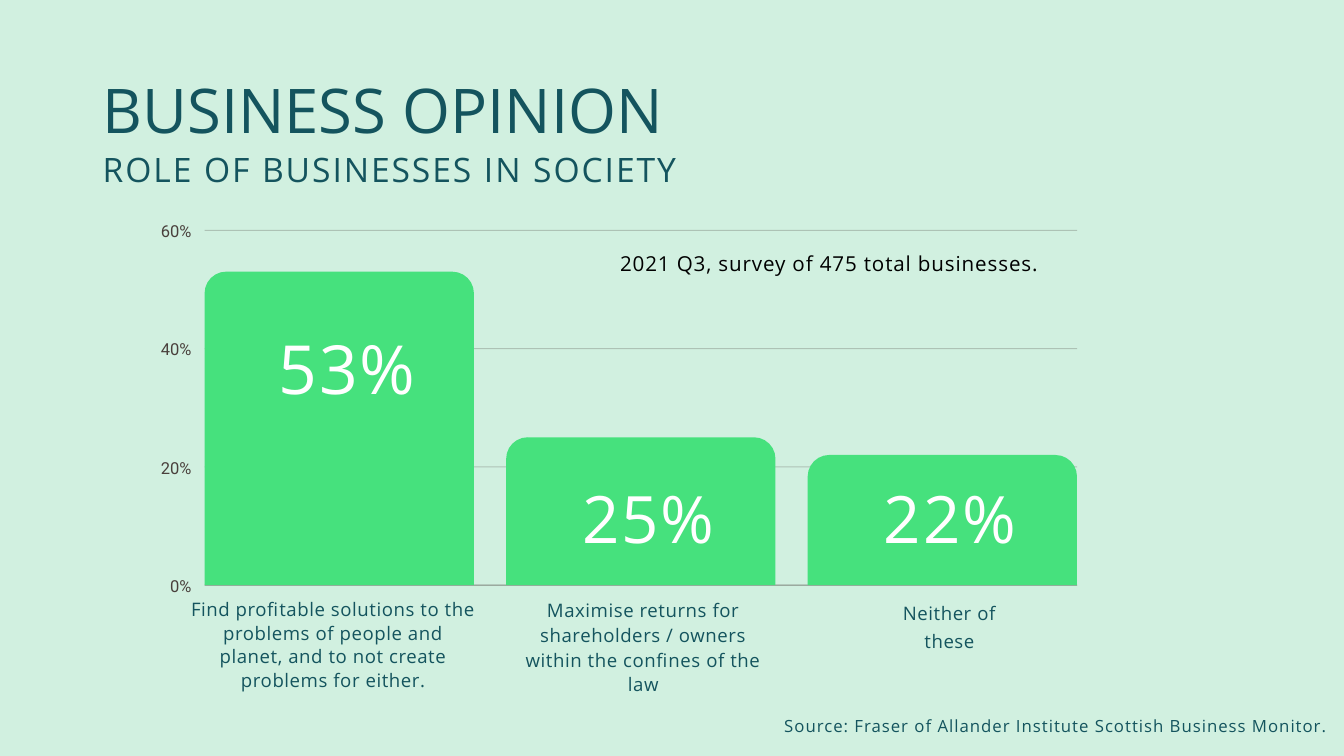
from dataclasses import dataclass

from lxml import etree
from pptx import Presentation
from pptx.dml.color import RGBColor
from pptx.enum.shapes import MSO_CONNECTOR, MSO_SHAPE
from pptx.enum.text import MSO_ANCHOR, PP_ALIGN
from pptx.oxml.ns import qn
from pptx.util import Inches, Pt

LEFT, CENTER, RIGHT = PP_ALIGN.LEFT, PP_ALIGN.CENTER, PP_ALIGN.RIGHT
TOP, MIDDLE = MSO_ANCHOR.TOP, MSO_ANCHOR.MIDDLE
STRAIGHT = MSO_CONNECTOR.STRAIGHT
ROUND_TOP = MSO_SHAPE.ROUND_2_SAME_RECTANGLE

SLIDE_WIDTH, SLIDE_HEIGHT = Inches(13.333), Inches(7.5)
GRID_COLUMNS = 160  # square grid: 160 columns by 90 rows
CELL = SLIDE_WIDTH / GRID_COLUMNS


@dataclass(frozen=True)
class Theme:
    background: str = "D1F0E0"
    ink: str = "14545E"
    bar: str = "46E17D"
    axis: str = "49403C"
    value: str = "FFFFFF"
    note: str = "000000"
    font: str = "Open Sans"
    axis_font: str = "Roboto"
    title_size: float = 44
    subtitle_size: float = 24
    note_size: float = 14.7
    caption_size: float = 13.3
    source_size: float = 12
    axis_size: float = 11.8


@dataclass(frozen=True)
class Box:
    """An area in grid cells."""
    left: float
    top: float
    width: float
    height: float

    def inner(self, left, top, width, height):
        return Box(self.left + left, self.top + top, width, height)

    def emu(self):
        return [round(n * CELL) for n in (self.left, self.top, self.width, self.height)]


@dataclass(frozen=True)
class Answer:
    """A bar with its caption; shift and drop place the texts against the bar."""
    percent: int
    value_size: float
    value_drop: float
    caption: str
    caption_width: float
    caption_shift: float
    caption_leading: float


THEME = Theme()
HEADER = Box(11.04, 4.8, 138, 18.84)
CHART = Box(24.36, 27.42, 103.86, 42.24)
FOOTER = Box(93.36, 82.92, 65.28, 4.08)
AXIS_MAX, AXIS_STEP = 60, 20
BAR_GAP, BAR_RADIUS = 3.84, 2.56
VALUE_SHIFT = 0.92
VALUE_LEADING = 1.2

ANSWERS = [
    Answer(53, 48.4, 6.54, "Find profitable solutions to the problems of people and "
           "planet, and to not create problems for either.", 33.96, -0.72, 16.9),
    Answer(25, 46.7, 4.8, "Maximise returns for shareholders / owners within the "
           "confines of the law", 30.48, 0.3, 17.7),
    Answer(22, 46.7, 2.7, "Neither of these", 16.8, 0.85, 19.7),
]


def add_text(slide, box, text, *, size, color=THEME.ink, font=THEME.font, align=LEFT,
             anchor=TOP, leading=None, tracking=0, inset=(0, 0)):
    """Leading is a Pt length or a share of the line; tracking is in points."""
    frame = slide.shapes.add_textbox(*box.emu()).text_frame
    frame.word_wrap = True
    frame.vertical_anchor = anchor
    frame.margin_left = frame.margin_right = Inches(inset[0])
    frame.margin_top = frame.margin_bottom = Inches(inset[1])
    paragraph = frame.paragraphs[0]
    paragraph.alignment = align
    paragraph.line_spacing = leading
    run = paragraph.add_run()
    run.text = text
    run.font.size = Pt(size)
    run.font.name = font
    run.font.color.rgb = RGBColor.from_string(color)
    if tracking:
        run._r.get_or_add_rPr().set("spc", str(round(tracking * 100)))


def add_gridline(slide, box, y, opacity):
    left, top, width, _ = box.inner(0, y, box.width, 0).emu()
    line = slide.shapes.add_connector(STRAIGHT, left, top, left + width, top)
    line.line.width = Pt(0.75)
    line.line.color.rgb = RGBColor.from_string(THEME.axis)
    properties = line._element.spPr
    color = properties.find(".//" + qn("a:srgbClr"))
    etree.SubElement(color, qn("a:alpha")).set("val", str(opacity * 1000))
    etree.SubElement(properties, qn("a:effectLst"))


def add_axis(slide, box):
    for percent in range(AXIS_MAX, -1, -AXIS_STEP):
        y = box.height * (1 - percent / AXIS_MAX)
        add_gridline(slide, box, y, opacity=25 if percent else 60)
        add_text(slide, box.inner(-7.56, y - 1.5, 6, 2.64), f"{percent}%",
                 size=THEME.axis_size, color=THEME.axis, font=THEME.axis_font,
                 align=RIGHT, leading=Pt(16.5))


def add_bar(slide, box):
    bar = slide.shapes.add_shape(ROUND_TOP, *box.emu())
    bar.adjustments[0] = BAR_RADIUS / min(box.width, box.height)
    bar.shadow.inherit = False
    bar.fill.solid()
    bar.fill.fore_color.rgb = RGBColor.from_string(THEME.bar)
    bar.line.fill.background()


def add_answer(slide, column, answer):
    """Fill one column of the chart: bar, value and caption."""
    height = column.height * answer.percent / AXIS_MAX
    bar = column.inner(0, column.height - height, column.width, height)
    add_bar(slide, bar)
    add_text(slide, bar.inner(VALUE_SHIFT, answer.value_drop, bar.width, 9.5),
             f"{answer.percent}%", size=answer.value_size, color=THEME.value,
             align=CENTER, leading=Pt(answer.value_size * VALUE_LEADING), tracking=1.4)
    caption_left = (column.width - answer.caption_width) / 2 + answer.caption_shift
    add_text(slide, column.inner(caption_left, column.height + 1.38,
                                 answer.caption_width, 12),
             answer.caption, size=THEME.caption_size, align=CENTER,
             leading=Pt(answer.caption_leading), tracking=0.4)


def add_bar_chart(slide, box):
    add_axis(slide, box)
    width = (box.width - BAR_GAP * (len(ANSWERS) - 1)) / len(ANSWERS)
    for index, answer in enumerate(ANSWERS):
        column = box.inner(index * (width + BAR_GAP), 0, width, box.height)
        add_answer(slide, column, answer)
    add_text(slide, box.inner(38.88, 1.62, 70.92, 3.48),
             "2021 Q3, survey of 475 total businesses.", size=THEME.note_size,
             color=THEME.note, align=CENTER, leading=Pt(22.3), tracking=0.6)


def add_header(slide, box):
    add_text(slide, box.inner(0, 0, box.width, 17.4), "BUSINESS OPINION",
             size=THEME.title_size, anchor=MIDDLE, leading=0.9, inset=(0.1, 0.05))
    add_text(slide, box.inner(0, 12.84, box.width, 6), "ROLE OF BUSINESSES IN SOCIETY",
             size=THEME.subtitle_size, leading=0.9, tracking=1.4, inset=(0.1, 0.05))


def add_source(slide, box):
    add_text(slide, box, "Source: Fraser of Allander Institute Scottish Business Monitor.",
             size=THEME.source_size, leading=Pt(28.3), tracking=0.7)


def main():
    presentation = Presentation()
    presentation.slide_width, presentation.slide_height = SLIDE_WIDTH, SLIDE_HEIGHT
    slide = presentation.slides.add_slide(presentation.slide_layouts[6])
    slide.background.fill.solid()
    slide.background.fill.fore_color.rgb = RGBColor.from_string(THEME.background)
    add_header(slide, HEADER)
    add_bar_chart(slide, CHART)
    add_source(slide, FOOTER)
    presentation.save("out.pptx")


if __name__ == "__main__":
    main()
